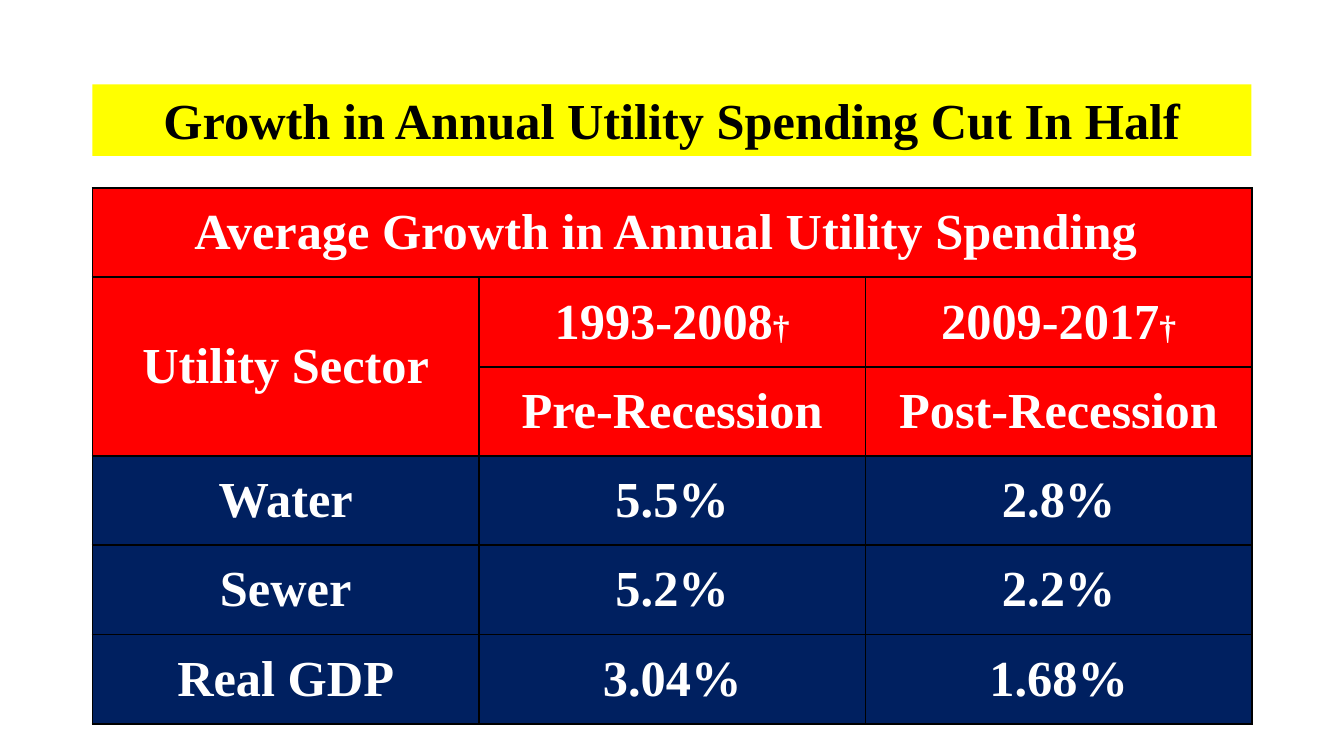
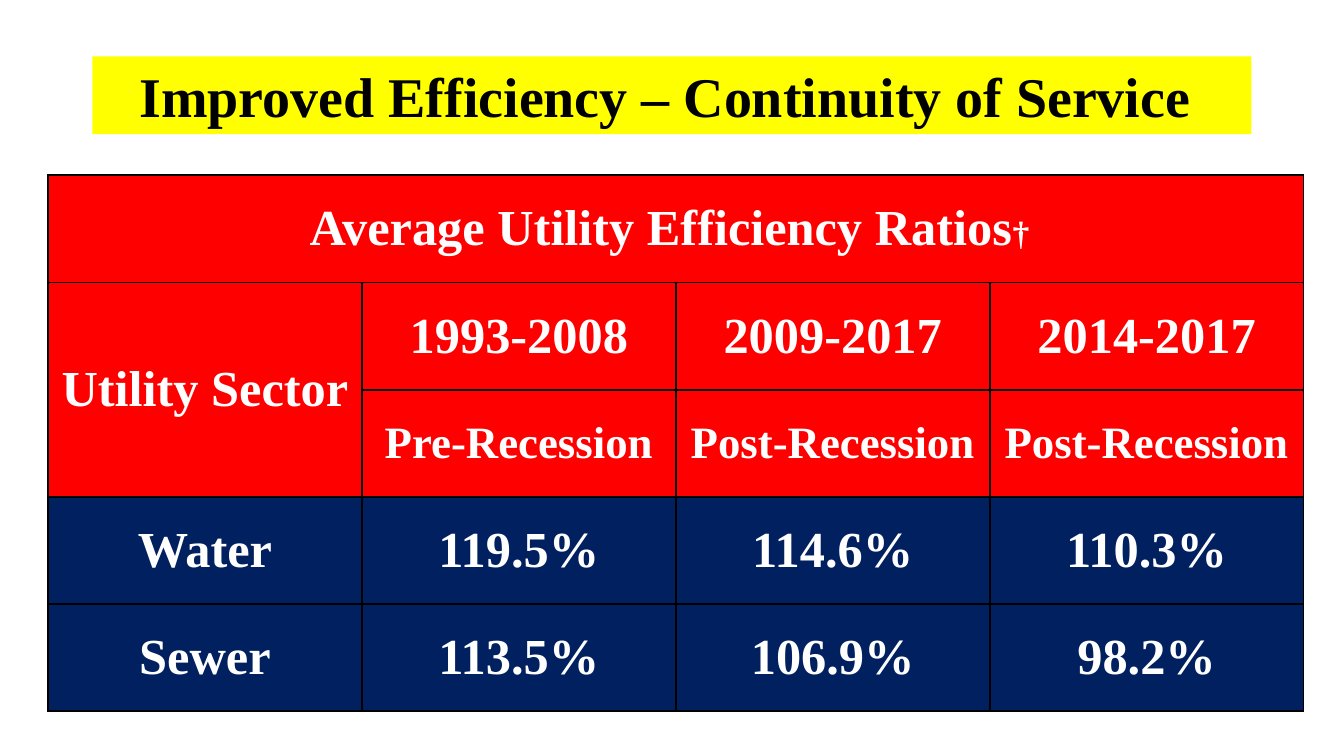
import lxml.etree
import pptx
import pptx.dml.color
import pptx.enum.shapes
import pptx.enum.text
import pptx.oxml.ns
import pptx.util
from pptx.util import Cm

BLACK = pptx.dml.color.RGBColor(0x00, 0x00, 0x00)
WHITE = pptx.dml.color.RGBColor(0xFF, 0xFF, 0xFF)
YELLOW = pptx.dml.color.RGBColor(0xFF, 0xFF, 0x00)
RED = pptx.dml.color.RGBColor(0xFF, 0x00, 0x00)
NAVY = pptx.dml.color.RGBColor(0x00, 0x20, 0x60)
FONT = "Times New Roman"
DAGGER = "†"
HEADER_ROWS = 3
BAND_LEFT, BAND_WIDTH = Cm(2.33), Cm(29.21)


def write_text(text_frame, text, size=36, color=WHITE, dagger_size=24):
    """Write one centred bold line, with any dagger set smaller."""
    paragraph = text_frame.paragraphs[0]
    paragraph.alignment = pptx.enum.text.PP_ALIGN.CENTER
    before, dagger, after = text.partition(DAGGER)
    for part in filter(None, (before, dagger, after)):
        run = paragraph.add_run()
        run.text = part
        run.font.name = FONT
        run.font.bold = True
        run.font.size = pptx.util.Pt(dagger_size if part == DAGGER else size)
        run.font.color.rgb = color


def add_borders(cell, width=1.5, color=BLACK):
    """Draw a line on all four sides of a table cell."""
    properties = cell._tc.get_or_add_tcPr()
    for side in ("a:lnL", "a:lnR", "a:lnT", "a:lnB"):
        line = lxml.etree.SubElement(properties, pptx.oxml.ns.qn(side), w=str(pptx.util.Pt(width)))
        fill = lxml.etree.SubElement(line, pptx.oxml.ns.qn("a:solidFill"))
        lxml.etree.SubElement(fill, pptx.oxml.ns.qn("a:srgbClr"), val=str(color))


# Content: None marks a cell covered by a merged neighbour
slides = [
    {
        "title": "Growth in Annual Utility Spending Cut In Half",
        "title_size": 36, "band_top": 2.13, "band_height": 1.8,
        "left": 2.33, "top": 4.74, "column_width": 9.74, "row_height": 2.25,
        "period_size": 36,
        "rows": [
            ["Average Growth in Annual Utility Spending ", None, None],
            ["Utility Sector", "1993-2008†", "2009-2017†"],
            [None, "Pre-Recession", "Post-Recession"],
            ["Water", "5.5%", "2.8%"],
            ["Sewer", "5.2%", "2.2%"],
            ["Real GDP", "3.04%", "1.68%"],
        ],
    },
    {
        "title": "Improved Efficiency – Continuity of Service ",
        "title_size": 40, "band_top": 1.42, "band_height": 1.96,
        "left": 1.21, "top": 4.42, "column_width": 7.91, "row_height": 2.7,
        "period_size": 32,
        "rows": [
            ["Average Utility Efficiency Ratios† ", None, None, None],
            ["Utility Sector", "1993-2008", "2009-2017", "2014-2017"],
            [None, "Pre-Recession", "Post-Recession", "Post-Recession"],
            ["Water", "119.5%", "114.6%", "110.3%"],
            ["Sewer", "113.5%", "106.9%", "98.2%"],
        ],
    },
]

presentation = pptx.Presentation()
presentation.slide_width = Cm(33.87)
presentation.slide_height = Cm(19.05)

for content in slides:
    slide = presentation.slides.add_slide(presentation.slide_layouts[6])
    rows = content["rows"]
    row_count, column_count = len(rows), len(rows[0])

    # Table frame
    column_width, row_height = Cm(content["column_width"]), Cm(content["row_height"])
    table = slide.shapes.add_table(
        row_count, column_count, Cm(content["left"]), Cm(content["top"]),
        column_width * column_count, row_height * row_count).table
    table.first_row = False
    table.horz_banding = False
    for column in table.columns:
        column.width = column_width
    for row in table.rows:
        row.height = row_height

    # Heading across the top, sector label over two rows
    table.cell(0, 0).merge(table.cell(0, column_count - 1))
    table.cell(1, 0).merge(table.cell(2, 0))

    # Cells
    for row_index, texts in enumerate(rows):
        for column_index, text in enumerate(texts):
            cell = table.cell(row_index, column_index)
            add_borders(cell)
            cell.fill.solid()
            cell.fill.fore_color.rgb = RED if row_index < HEADER_ROWS else NAVY
            cell.vertical_anchor = pptx.enum.text.MSO_ANCHOR.MIDDLE
            cell.margin_left = cell.margin_right = Cm(0.18)
            cell.margin_top = cell.margin_bottom = 0
            if text:
                is_period = row_index == HEADER_ROWS - 1
                write_text(cell.text_frame, text, size=content["period_size"] if is_period else 36)

    # Title band
    band = slide.shapes.add_shape(
        pptx.enum.shapes.MSO_SHAPE.RECTANGLE, BAND_LEFT, Cm(content["band_top"]),
        BAND_WIDTH, Cm(content["band_height"]))
    band.shadow.inherit = False
    band.fill.solid()
    band.fill.fore_color.rgb = YELLOW
    band.line.fill.background()
    band.text_frame.word_wrap = True
    band.text_frame.auto_size = pptx.enum.text.MSO_AUTO_SIZE.SHAPE_TO_FIT_TEXT
    band.text_frame.vertical_anchor = pptx.enum.text.MSO_ANCHOR.TOP
    write_text(band.text_frame, content["title"], size=content["title_size"], color=BLACK)

presentation.save("out.pptx")
